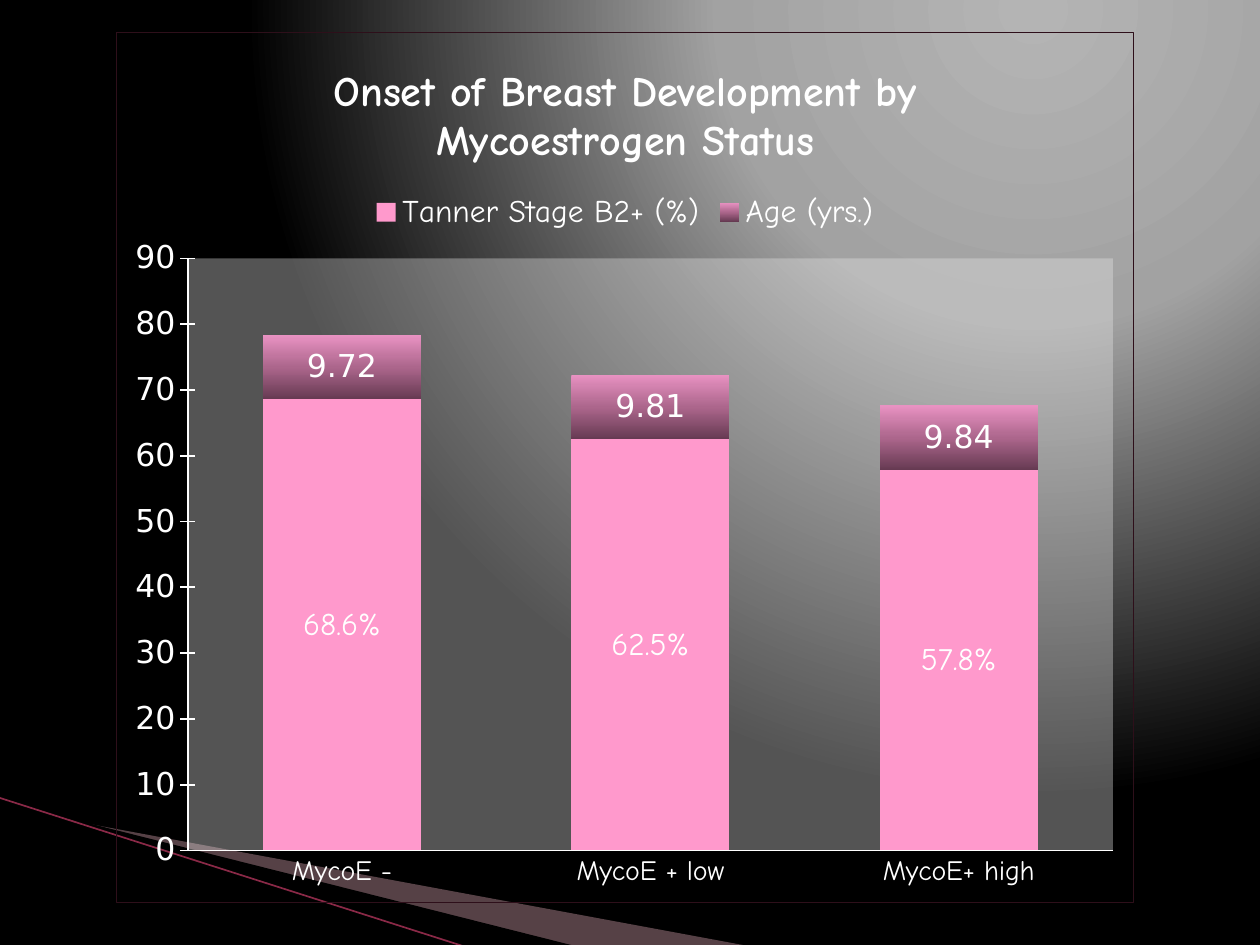
import pptx
import pptx.chart.data
import pptx.dml.color
import pptx.enum.chart
import pptx.oxml
import pptx.oxml.ns
import pptx.util
from lxml import etree

Inches = pptx.util.Inches
Pt = pptx.util.Pt
RGBColor = pptx.dml.color.RGBColor
qn = pptx.oxml.ns.qn
enums = pptx.enum.chart

WHITE = RGBColor(0xFF, 0xFF, 0xFF)
BLACK = RGBColor(0x00, 0x00, 0x00)
SILVER = RGBColor(0xB4, 0xB4, 0xB4)
GRAY = RGBColor(0xA2, 0xA2, 0xA2)
PLOT_GRAY = RGBColor(0xE6, 0xE6, 0xE6)
ROSE = RGBColor(0xD8, 0xA3, 0xAF)
WINE = RGBColor(0x8A, 0x29, 0x47)
DARK_WINE = RGBColor(0x2E, 0x0F, 0x1A)
PINK = RGBColor(0xFF, 0x99, 0xCC)
AGE_TOP = RGBColor(0xE8, 0x92, 0xC2)
AGE_MIDDLE = RGBColor(0xAC, 0x66, 0x8C)
AGE_BOTTOM = RGBColor(0x66, 0x3A, 0x52)

HAND_FONT = "Comic Neue"
NUMBER_FONT = "DejaVu Sans"
NAMESPACES = pptx.oxml.ns.nsdecls("a", "c")


def gradient_xml(stops, direction):
    marks = "".join(
        f'<a:gs pos="{place * 1000}"><a:srgbClr val="{color}"/></a:gs>'
        for place, color in stops
    )
    return pptx.oxml.parse_xml(
        f'<a:gradFill {NAMESPACES} rotWithShape="1"><a:gsLst>{marks}</a:gsLst>'
        f"{direction}</a:gradFill>"
    )


def replace_gradient(fill, holder, stops, direction):
    fill.gradient()
    old = holder.find(".//" + qn("a:gradFill"))
    old.getparent().replace(old, gradient_xml(stops, direction))


class SlideBuilder:
    def __init__(self, page):
        self.page = page

    def style_font(self, font, name=NUMBER_FONT, size=18, bold=False):
        font.name = name
        font.size = Pt(size)
        font.bold = bold
        font.color.rgb = WHITE

    def background(self, stops):
        direction = (
            '<a:path path="circle">'
            '<a:fillToRect l="65000" t="0" r="0" b="98000"/></a:path>'
        )
        replace_gradient(
            self.page.background.fill, self.page._element, stops, direction
        )

    def wedge(self, points, color, opacity=100):
        corners = [(Inches(x), Inches(y)) for x, y in points]
        builder = self.page.shapes.build_freeform(*corners[0])
        builder.add_line_segments(corners[1:], close=True)
        shape = builder.convert_to_shape()
        shape.shadow.inherit = False
        shape.line.fill.background()
        shape.fill.solid()
        shape.fill.fore_color.rgb = color
        if opacity < 100:
            tint = shape._element.spPr.find(".//" + qn("a:srgbClr"))
            etree.SubElement(tint, qn("a:alpha"), val=str(opacity * 1000))

    def line(self, start, end, color, width):
        ends = [Inches(length) for length in (*start, *end)]
        connector = self.page.shapes.add_connector(
            pptx.enum.shapes.MSO_CONNECTOR.STRAIGHT, *ends
        )
        connector.line.color.rgb = color
        connector.line.width = Pt(width)
        etree.SubElement(connector._element.spPr, qn("a:effectLst"))

    def stacked_chart(self, title, categories, series, left, top, width, height):
        data = pptx.chart.data.CategoryChartData()
        data.categories = categories
        for name, values in series:
            data.add_series(name, values)
        frame = self.page.shapes.add_chart(
            enums.XL_CHART_TYPE.COLUMN_STACKED,
            Inches(left), Inches(top), Inches(width), Inches(height), data,
        )
        chart = frame.chart
        self.style_font(chart.font)
        chart.has_title = True
        chart.chart_title.include_in_layout = False
        chart.chart_title.text_frame.text = title
        span = chart.chart_title.text_frame.paragraphs[0].runs[0]
        self.style_font(span.font, HAND_FONT, 24, True)
        chart.has_legend = True
        chart.legend.position = enums.XL_LEGEND_POSITION.TOP
        chart.legend.include_in_layout = False
        self.style_font(chart.legend.font, HAND_FONT)
        plot = chart.plots[0]
        plot.gap_width = 95
        plot.overlap = 100
        plot.vary_by_categories = False
        return chart

    def axes(self, chart, maximum, step):
        category, value = chart.category_axis, chart.value_axis
        value.minimum_scale = 0
        value.maximum_scale = maximum
        value.major_unit = step
        value.has_major_gridlines = False
        value.major_tick_mark = enums.XL_TICK_MARK.CROSS
        category.major_tick_mark = enums.XL_TICK_MARK.NONE
        self.style_font(value.tick_labels.font)
        self.style_font(category.tick_labels.font, HAND_FONT, 16)
        for axis in (category, value):
            axis.minor_tick_mark = enums.XL_TICK_MARK.NONE
            axis.format.line.color.rgb = WHITE
            axis.format.line.width = Pt(1)

    def series_labels(self, series, font_name):
        labels = series.data_labels
        labels.show_value = True
        labels.position = enums.XL_LABEL_POSITION.CENTER
        self.style_font(labels.font, font_name)

    def percent_labels(self, series):
        for index, value in enumerate(series.values):
            label = series.points[index].data_label
            label.text_frame.text = f"{value}%"
            self.style_font(
                label.text_frame.paragraphs[0].runs[0].font, HAND_FONT
            )
            label.position = enums.XL_LABEL_POSITION.CENTER

    def chart_areas(self, chart, x, y, w, h):
        root = chart._chartSpace
        area = root.find(".//" + qn("c:plotArea"))
        for old in area.findall(qn("c:layout")):
            area.remove(old)
        sizes = "".join(
            f'<c:{key} val="{size}"/>'
            for key, size in (("x", x), ("y", y), ("w", w), ("h", h))
        )
        area.insert(0, pptx.oxml.parse_xml(
            f'<c:layout {NAMESPACES}><c:manualLayout>'
            '<c:layoutTarget val="inner"/><c:xMode val="edge"/>'
            f'<c:yMode val="edge"/>{sizes}</c:manualLayout></c:layout>'
        ))
        area.append(pptx.oxml.parse_xml(
            f'<c:spPr {NAMESPACES}><a:solidFill><a:srgbClr val="{PLOT_GRAY}">'
            '<a:alpha val="37000"/></a:srgbClr></a:solidFill>'
            "<a:ln><a:noFill/></a:ln></c:spPr>"
        ))
        root.find(qn("c:chart")).addnext(pptx.oxml.parse_xml(
            f'<c:spPr {NAMESPACES}><a:noFill/><a:ln w="{Pt(0.75)}"><a:solidFill>'
            f'<a:srgbClr val="{DARK_WINE}"/></a:solidFill></a:ln></c:spPr>'
        ))


def main():
    deck = pptx.Presentation()
    deck.slide_width, deck.slide_height = Inches(10), Inches(7.5)
    slide = SlideBuilder(deck.slides.add_slide(deck.slide_layouts[6]))

    # Backdrop and corner decoration
    slide.background([(0, SILVER), (40, GRAY), (100, BLACK)])
    slide.wedge([(0.55, 6.51), (5.95, 7.51), (4.56, 7.51), (0.55, 6.5)], ROSE, 40)
    slide.wedge([(0.53, 6.49), (4.57, 7.51), (3.72, 7.52), (0.54, 6.5)], BLACK)
    slide.line((-0.01, 6.33), (3.71, 7.52), WINE, 0.95)

    # Chart
    chart = slide.stacked_chart(
        "Onset of Breast Development by Mycoestrogen Status",
        ["MycoE -", "MycoE + low", "MycoE+ high"],
        [("Tanner Stage B2+ (%)", [68.6, 62.5, 57.8]),
         ("Age (yrs.)", [9.72, 9.81, 9.84])],
        0.92, 0.25, 8.08, 6.92,
    )
    slide.axes(chart, 90, 10)
    slide.chart_areas(chart, 0.07, 0.26, 0.91, 0.68)

    # Series colours and labels
    stage, age = chart.plots[0].series
    stage.format.fill.solid()
    stage.format.fill.fore_color.rgb = PINK
    replace_gradient(
        age.format.fill, age._element,
        [(0, AGE_TOP), (50, AGE_MIDDLE), (100, AGE_BOTTOM)],
        '<a:lin ang="5400000" scaled="0"/>',
    )
    slide.series_labels(stage, HAND_FONT)
    slide.percent_labels(stage)
    slide.series_labels(age, NUMBER_FONT)

    deck.save("out.pptx")


if __name__ == "__main__":
    main()
